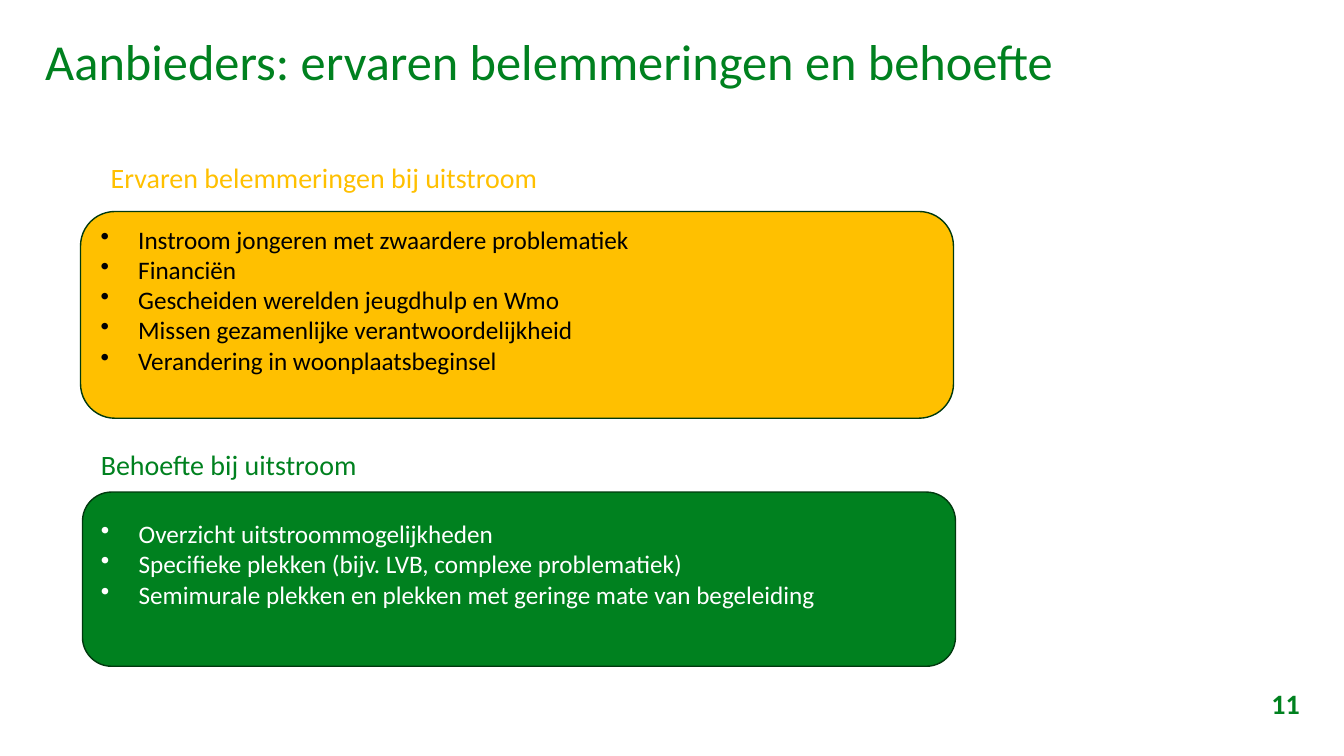
import pptx
import pptx.dml.color
import pptx.enum.shapes
import pptx.enum.text
import pptx.util
from lxml import etree
from pptx.dml.color import RGBColor
from pptx.enum.text import MSO_ANCHOR, PP_ALIGN
from pptx.util import Cm

GREEN = RGBColor(0x00, 0x81, 0x1F)
DARK_GREEN = RGBColor(0x00, 0x39, 0x0E)
AMBER = RGBColor(0xFF, 0xC0, 0x00)
BLACK = RGBColor(0x00, 0x00, 0x00)
WHITE = RGBColor(0xFF, 0xFF, 0xFF)

DRAWING_NS = "http://schemas.openxmlformats.org/drawingml/2006/main"
BULLET_INDENT = Cm(0.95)
SPARE_LINE = Cm(0.9)  # room kept free below each list


def write(paragraph, text, *, font, size, color, bold=False,
          align=PP_ALIGN.LEFT, spacing=1.0, bullet=False):
    """Put text in the paragraph, with or without a hanging bullet."""
    properties = paragraph._p.get_or_add_pPr()
    indent = BULLET_INDENT if bullet else 0
    properties.set("marL", str(int(indent)))
    properties.set("indent", str(-int(indent)))
    paragraph.alignment = align
    paragraph.line_spacing = spacing
    paragraph.space_before = pptx.util.Pt(0)
    if bullet:
        etree.SubElement(properties, f"{{{DRAWING_NS}}}buChar", char="•")
    else:
        etree.SubElement(properties, f"{{{DRAWING_NS}}}buNone")
    run = paragraph.add_run()
    run.text = text
    run.font.name = font
    run.font.size = pptx.util.Pt(size)
    run.font.bold = bold
    run.font.color.rgb = color


class SlideBuilder:
    font = "Calibri"

    def __init__(self, slide):
        self.slide = slide

    def prepare(self, frame, anchor, inset_x=0, inset_y=0):
        frame.word_wrap = True
        frame.auto_size = pptx.enum.text.MSO_AUTO_SIZE.NONE
        frame.vertical_anchor = anchor
        frame.margin_left = frame.margin_right = Cm(inset_x)
        frame.margin_top = frame.margin_bottom = Cm(inset_y)

    def placeholder(self, index, text, place, **style):
        holder = self.slide.placeholders[index]
        holder.left, holder.top, holder.width, holder.height = map(Cm, place)
        self.prepare(holder.text_frame, MSO_ANCHOR.TOP)
        write(holder.text_frame.paragraphs[0], text, font=self.font, **style)

    def label(self, text, place, anchor=MSO_ANCHOR.TOP, inset_x=0, inset_y=0, **style):
        frame = self.slide.shapes.add_textbox(*map(Cm, place)).text_frame
        self.prepare(frame, anchor, inset_x, inset_y)
        write(frame.paragraphs[0], text, font=self.font, **style)

    def panel(self, items, place, fill, color):
        """Draw a rounded panel holding a bulleted list."""
        panel = self.slide.shapes.add_shape(
            pptx.enum.shapes.MSO_SHAPE.ROUNDED_RECTANGLE, *map(Cm, place))
        panel.shadow.inherit = False
        panel.fill.solid()
        panel.fill.fore_color.rgb = fill
        panel.line.color.rgb = DARK_GREEN
        panel.line.width = pptx.util.Pt(1)
        frame = panel.text_frame
        self.prepare(frame, MSO_ANCHOR.MIDDLE, 0.25, 0.13)
        frame.margin_bottom = SPARE_LINE
        for number, item in enumerate(items):
            paragraph = frame.add_paragraph() if number else frame.paragraphs[0]
            write(paragraph, item, font=self.font, size=18, color=color, bullet=True)


def main():
    presentation = pptx.Presentation()
    presentation.slide_width = Cm(33.87)
    presentation.slide_height = Cm(19.05)
    builder = SlideBuilder(presentation.slides.add_slide(presentation.slide_layouts[1]))

    builder.placeholder(0, "Aanbieders: ervaren belemmeringen en behoefte",
                        (1.14, 0.91, 31.6, 1.42), size=36, color=GREEN, spacing=0.92)
    builder.placeholder(1, "Behoefte bij uitstroom",
                        (2.54, 11.23, 9.6, 1.1), size=20, color=GREEN, spacing=1.05)
    builder.label("11", (31.06, 17.3, 1.7, 0.86), anchor=MSO_ANCHOR.MIDDLE,
                  size=20, color=GREEN, bold=True, align=PP_ALIGN.RIGHT)
    builder.label("Ervaren belemmeringen bij uitstroom", (2.54, 3.91, 16.92, 1.12),
                  inset_x=0.25, inset_y=0.13, size=20, color=AMBER)

    obstacles = [
        "Instroom jongeren met zwaardere problematiek",
        "Financiën",
        "Gescheiden werelden jeugdhulp en Wmo",
        "Missen gezamenlijke verantwoordelijkheid",
        "Verandering in woonplaatsbeginsel",
    ]
    needs = [
        "Overzicht uitstroommogelijkheden",
        "Specifieke plekken (bijv. LVB, complexe problematiek)",
        "Semimurale plekken en plekken met geringe mate van begeleiding",
    ]
    builder.panel(obstacles, (2.03, 5.33, 22, 5.21), AMBER, BLACK)
    builder.panel(needs, (2.08, 12.4, 22, 4.39), GREEN, WHITE)

    presentation.save("out.pptx")


if __name__ == "__main__":
    main()
